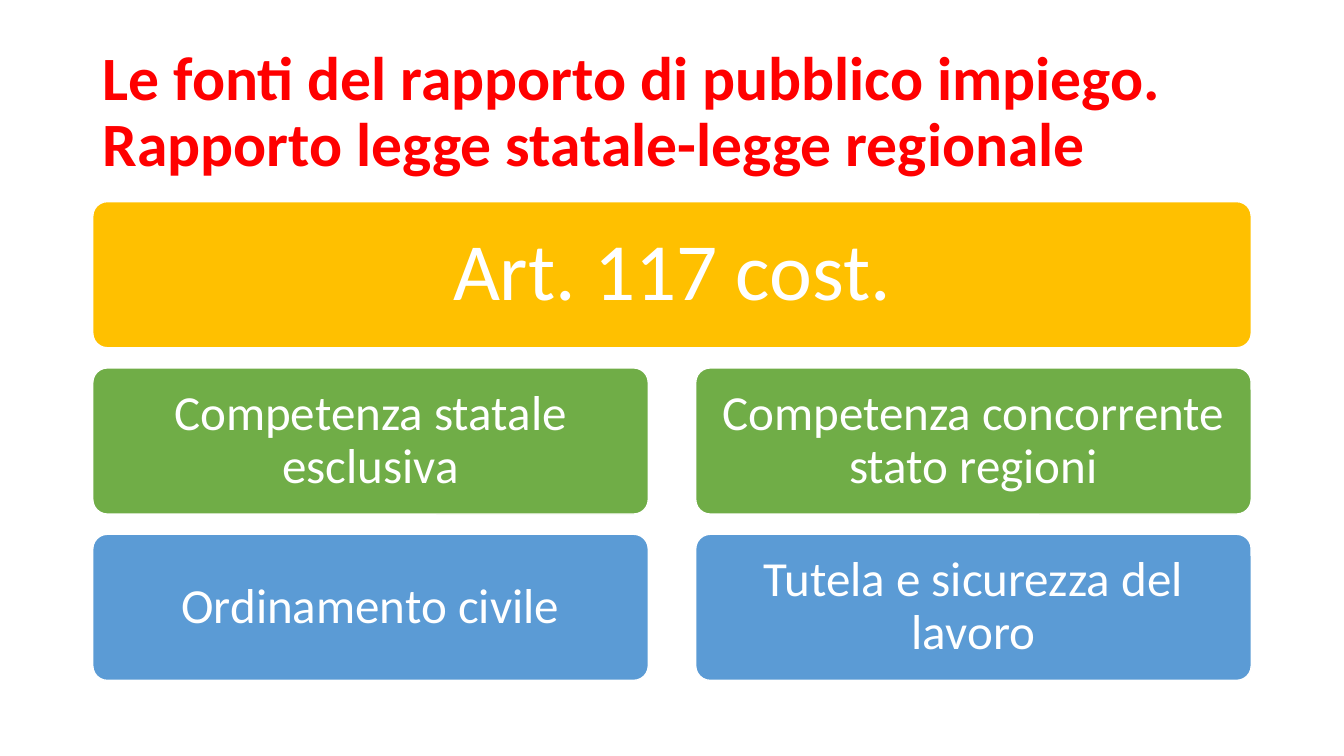
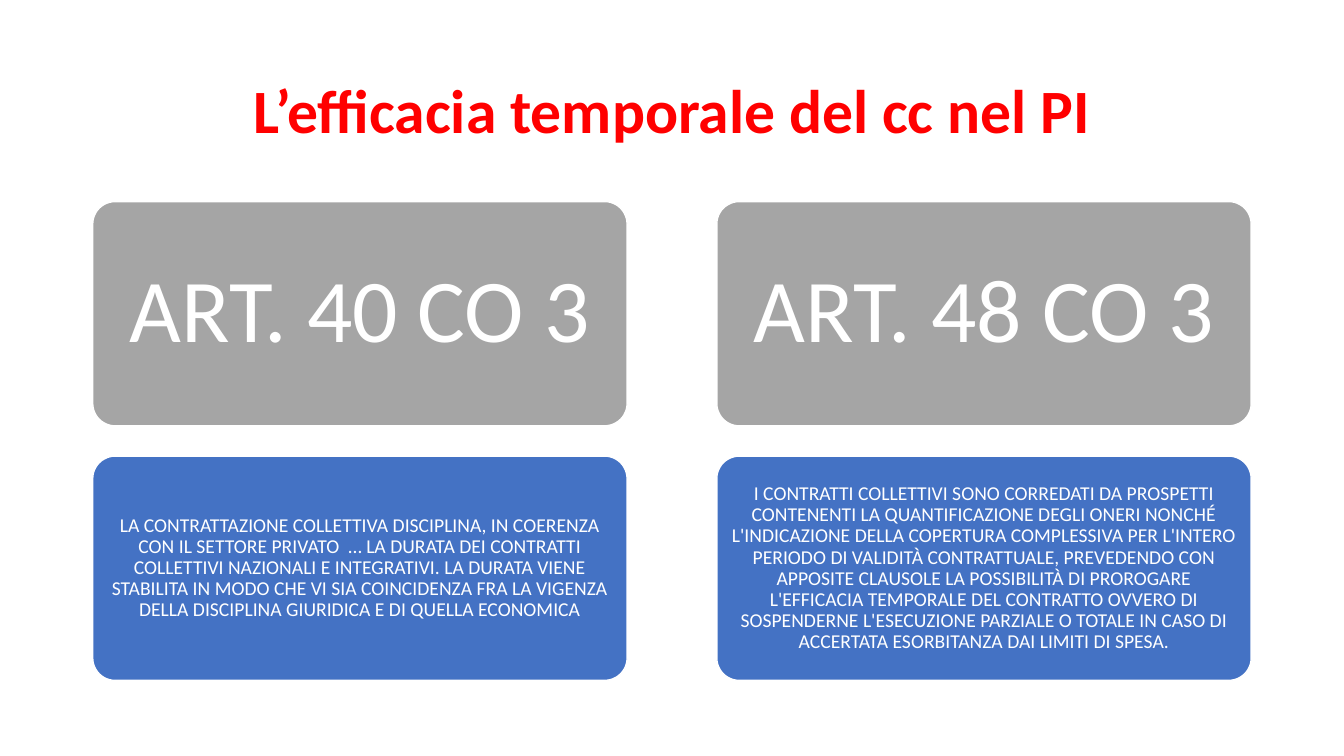
"""Build two slides of rounded cards laid out on grids."""
from dataclasses import dataclass

import pptx
import pptx.dml.color
import pptx.enum.shapes
import pptx.enum.text
import pptx.presentation
import pptx.slide
import pptx.text.text
import pptx.util

Inches = pptx.util.Inches
Pt = pptx.util.Pt
RGBColor = pptx.dml.color.RGBColor
Align = pptx.enum.text.PP_ALIGN

RED = RGBColor(0xFF, 0x00, 0x00)
WHITE = RGBColor(0xFF, 0xFF, 0xFF)
GOLD = RGBColor(0xFF, 0xC0, 0x00)
GREEN = RGBColor(0x70, 0xAD, 0x47)
SKY = RGBColor(0x5B, 0x9B, 0xD5)
GRAY = RGBColor(0xA5, 0xA5, 0xA5)
BLUE = RGBColor(0x44, 0x72, 0xC4)

FONT = "Calibri"
LEFT, TOP, WIDTH, HEIGHT = 0.92, 2, 11.49, 4.75


@dataclass(frozen=True)
class Style:
    fill: RGBColor
    size: int
    inset: float


@dataclass(frozen=True)
class Card:
    text: str
    col: int
    row: int
    style: Style
    span: int = 1


@dataclass(frozen=True)
class Grid:
    cols: int
    rows: int
    across: float
    down: float

    def place(self, card: Card) -> tuple[float, float, float, float]:
        wide = (WIDTH - self.across * (self.cols - 1)) / self.cols
        high = (HEIGHT - self.down * (self.rows - 1)) / self.rows
        left = LEFT + card.col * (wide + self.across)
        top = TOP + card.row * (high + self.down)
        return left, top, card.span * (wide + self.across) - self.across, high


@dataclass(frozen=True)
class Page:
    title: str
    align: Align
    grid: Grid
    cards: list[Card]


HEAD = Style(GOLD, 58, 0.24)
SCOPE = Style(GREEN, 35, 0.15)
TOPIC = Style(SKY, 35, 0.15)
RULE = Style(GRAY, 64, 0.27)
BODY = Style(BLUE, 14, 0.06)

PAGES = [
    Page(
        "Le fonti del rapporto di pubblico impiego. Rapporto legge statale-legge regionale",
        Align.LEFT,
        Grid(2, 3, 0.47, 0.2),
        [
            Card("Art. 117 cost.", 0, 0, HEAD, span=2),
            Card("Competenza statale esclusiva", 0, 1, SCOPE),
            Card("Ordinamento civile", 0, 2, TOPIC),
            Card("Competenza concorrente stato regioni", 1, 1, SCOPE),
            Card("Tutela e sicurezza del lavoro", 1, 2, TOPIC),
        ],
    ),
    Page(
        "L’efficacia temporale del cc nel PI",
        Align.CENTER,
        Grid(2, 2, 0.89, 0.3),
        [
            Card("ART. 40 CO 3", 0, 0, RULE),
            Card(
                "LA CONTRATTAZIONE COLLETTIVA DISCIPLINA, IN COERENZA CON IL SETTORE "
                "PRIVATO  … LA DURATA DEI CONTRATTI COLLETTIVI NAZIONALI E INTEGRATIVI. "
                "LA DURATA VIENE STABILITA IN MODO CHE VI SIA COINCIDENZA FRA LA VIGENZA "
                "DELLA DISCIPLINA GIURIDICA E DI QUELLA ECONOMICA",
                0, 1, BODY,
            ),
            Card("ART. 48 CO 3", 1, 0, RULE),
            Card(
                "I CONTRATTI COLLETTIVI SONO CORREDATI DA PROSPETTI CONTENENTI LA "
                "QUANTIFICAZIONE DEGLI ONERI NONCHÉ L'INDICAZIONE DELLA COPERTURA "
                "COMPLESSIVA PER L'INTERO PERIODO DI VALIDITÀ CONTRATTUALE, PREVEDENDO "
                "CON APPOSITE CLAUSOLE LA POSSIBILITÀ DI PROROGARE L'EFFICACIA TEMPORALE "
                "DEL CONTRATTO OVVERO DI SOSPENDERNE L'ESECUZIONE PARZIALE O TOTALE IN "
                "CASO DI ACCERTATA ESORBITANZA DAI LIMITI DI SPESA.",
                1, 1, BODY,
            ),
        ],
    ),
]


def write(frame: pptx.text.text.TextFrame, text: str, size: int,
          color: RGBColor, align: Align, bold: bool = False) -> None:
    frame.word_wrap = True
    frame.vertical_anchor = pptx.enum.text.MSO_ANCHOR.MIDDLE
    line = frame.paragraphs[0]
    line.text = text
    line.alignment = align
    line.line_spacing = 0.9
    line.font.name = FONT
    line.font.size = Pt(size)
    line.font.bold = bold
    line.font.color.rgb = color


def draw_title(slide: pptx.slide.Slide, page: Page) -> None:
    box = slide.shapes.add_textbox(*map(Inches, (LEFT, 0.4, 11.5, 1.45)))
    write(box.text_frame, page.title, 44, RED, page.align, bold=True)


def draw_card(slide: pptx.slide.Slide, grid: Grid, card: Card) -> None:
    shape = slide.shapes.add_shape(
        pptx.enum.shapes.MSO_SHAPE.ROUNDED_RECTANGLE, *map(Inches, grid.place(card)))
    shape.adjustments[0] = 0.1
    shape.shadow.inherit = False
    shape.fill.solid()
    shape.fill.fore_color.rgb = card.style.fill
    shape.line.color.rgb = WHITE
    shape.line.width = Pt(1)
    frame = shape.text_frame
    inset = Inches(card.style.inset)
    frame.margin_left = frame.margin_right = inset
    frame.margin_top = frame.margin_bottom = inset
    write(frame, card.text, card.style.size, WHITE, Align.CENTER)


def draw_page(deck: pptx.presentation.Presentation, page: Page) -> None:
    slide = deck.slides.add_slide(deck.slide_layouts[6])
    draw_title(slide, page)
    for card in page.cards:
        draw_card(slide, page.grid, card)


def main() -> None:
    deck = pptx.Presentation()
    deck.slide_width, deck.slide_height = Inches(13.33), Inches(7.5)
    for page in PAGES:
        draw_page(deck, page)
    deck.save("out.pptx")


if __name__ == "__main__":
    main()
